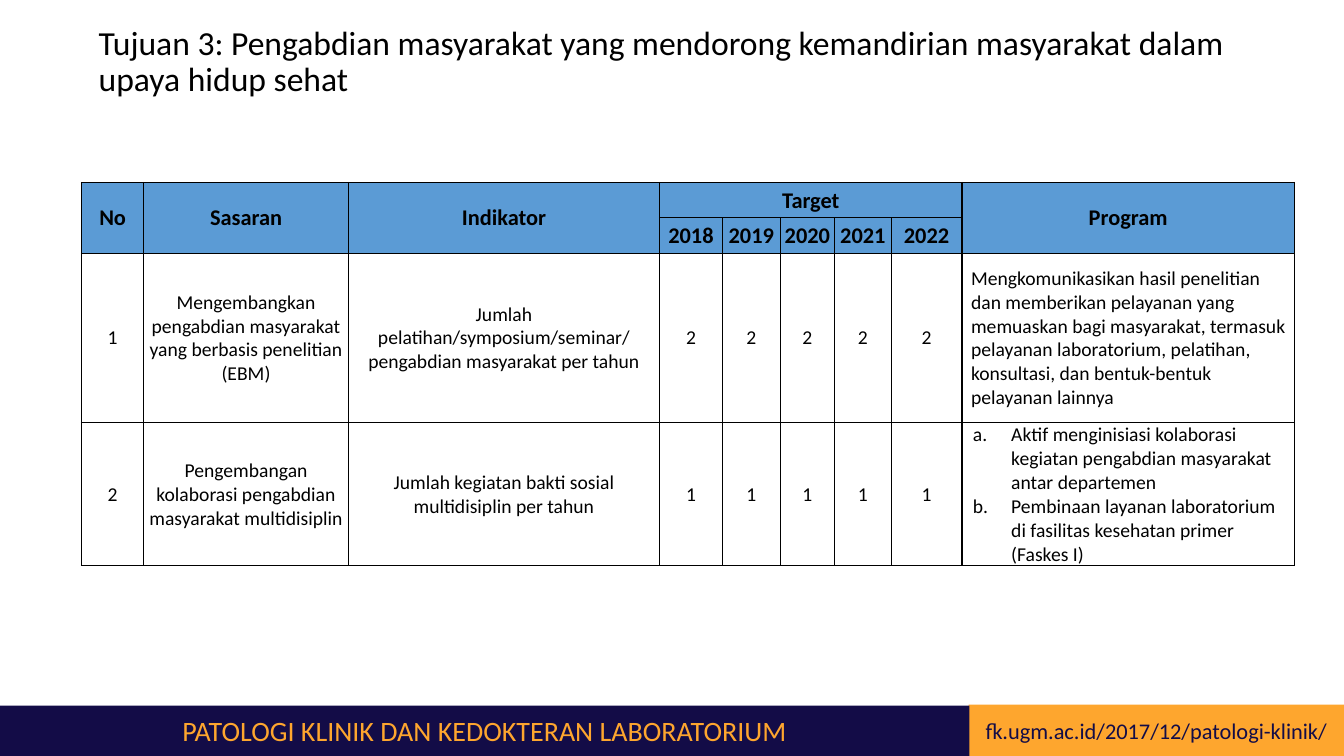
from lxml import etree
from pptx import Presentation
from pptx.dml.color import RGBColor
from pptx.enum.shapes import MSO_SHAPE
from pptx.enum.text import MSO_ANCHOR, PP_ALIGN
from pptx.oxml.ns import qn
from pptx.util import Pt

LEFT, CENTER = PP_ALIGN.LEFT, PP_ALIGN.CENTER
MIDDLE = MSO_ANCHOR.MIDDLE
RECT = MSO_SHAPE.RECTANGLE
BLACK, WHITE, BLUE = "000000", "FFFFFF", "5B9BD5"
NAVY, ORANGE = "130C47", "FEA62E"


def rgb(value):
    return RGBColor.from_string(value)


class Deck:
    font = "Calibri"

    def __init__(self, width, height):
        self.prs = Presentation()
        self.prs.slide_width, self.prs.slide_height = Pt(width), Pt(height)
        self.s = self.prs.slides.add_slide(self.prs.slide_layouts[6])

    def run(self, p, text, size, color, bold=False, align=LEFT):
        p.alignment = align
        r = p.add_run()
        r.text = text
        r.font.name, r.font.size, r.font.bold = self.font, Pt(size), bold
        r.font.color.rgb = rgb(color)

    def title(self, box, text, size):
        tf = self.s.shapes.add_textbox(*map(Pt, box)).text_frame
        tf.word_wrap = True
        tf.vertical_anchor = MIDDLE
        tf.paragraphs[0].line_spacing = 0.9
        self.run(tf.paragraphs[0], text, size, BLACK)

    def bar(self, box, text, size, fill, color):
        sp = self.s.shapes.add_shape(RECT, *map(Pt, box))
        sp.shadow.inherit = False
        sp.fill.solid()
        sp.fill.fore_color.rgb = rgb(fill)
        sp.line.fill.background()
        tf = sp.text_frame
        tf.word_wrap = True
        tf.vertical_anchor = MIDDLE
        self.run(tf.paragraphs[0], text, size, color, align=CENTER)

    def table(self, left, top, widths, heights):
        box = map(Pt, (left, top, sum(widths), sum(heights)))
        table = self.s.shapes.add_table(len(heights), len(widths), *box).table
        for col, width in zip(table.columns, widths):
            col.width = Pt(width)
        for row, height in zip(table.rows, heights):
            row.height = Pt(height)
        return table

    def style_cell(self, cell, fill):
        tcPr = cell._tc.get_or_add_tcPr()
        for side in ("a:lnL", "a:lnR", "a:lnT", "a:lnB"):
            ln = etree.SubElement(tcPr, qn(side), w=str(Pt(1)))
            solid = etree.SubElement(ln, qn("a:solidFill"))
            etree.SubElement(solid, qn("a:srgbClr"), val=BLACK)
        cell.fill.solid()
        cell.fill.fore_color.rgb = rgb(fill)
        cell.vertical_anchor = MIDDLE
        cell.margin_left = cell.margin_right = cell.margin_top = Pt(0.7)
        cell.margin_bottom = 0

    def cell_text(self, cell, text, size, bold=False, align=CENTER, indent=0):
        p = cell.text_frame.paragraphs[0]
        p._p.get_or_add_pPr().set("marL", str(Pt(indent)))
        self.run(p, text, size, BLACK, bold, align)

    def cell_list(self, cell, items, size, indent, hanging):
        tf = cell.text_frame
        for i, item in enumerate(items):
            p = tf.add_paragraph() if i else tf.paragraphs[0]
            pPr = p._p.get_or_add_pPr()
            pPr.set("marL", str(Pt(indent)))
            pPr.set("indent", str(-Pt(hanging)))
            etree.SubElement(pPr, qn("a:buFont"), typeface=self.font)
            etree.SubElement(pPr, qn("a:buAutoNum"), type="alphaLcPeriod")
            self.run(p, item, size, BLACK)


def main():
    deck = Deck(960, 540)

    # Title
    deck.title((63.4, 19.4, 828, 51),
               "Tujuan 3: Pengabdian masyarakat yang mendorong kemandirian "
               "masyarakat dalam upaya hidup sehat", 24)

    # Table grid with merged headings
    widths = [44.5, 146.2, 222.3, 44.9, 41.3, 38.8, 40.5, 50.6, 237.4]
    table = deck.table(58.2, 130.3, widths, [25.3, 25.3, 120.8, 102.4])
    for r in range(4):
        for c in range(len(widths)):
            deck.style_cell(table.cell(r, c), BLUE if r < 2 else WHITE)
    headings = {0: "No", 1: "Sasaran", 2: "Indikator", 3: "Target", 8: "Program"}
    for c, heading in headings.items():
        end = (0, 7) if heading == "Target" else (1, c)
        table.cell(0, c).merge(table.cell(*end))
        deck.cell_text(table.cell(0, c), heading, 16, bold=True)
    for i in range(5):
        deck.cell_text(table.cell(1, 3 + i), str(2018 + i), 16, bold=True)

    # Goals, indicators and yearly targets
    goals = [
        ("1", "Mengembangkan pengabdian masyarakat yang berbasis penelitian (EBM)",
         "Jumlah pelatihan/symposium/seminar/ pengabdian masyarakat per tahun",
         *["2"] * 5),
        ("2", "Pengembangan kolaborasi pengabdian masyarakat multidisiplin",
         "Jumlah kegiatan bakti sosial multidisiplin per tahun", *["1"] * 5),
    ]
    for r, goal in enumerate(goals, 2):
        for c, text in enumerate(goal):
            deck.cell_text(table.cell(r, c), text, 14)

    # Programs
    deck.cell_text(table.cell(2, 8),
                   "Mengkomunikasikan hasil penelitian dan memberikan pelayanan "
                   "yang memuaskan bagi masyarakat, termasuk pelayanan "
                   "laboratorium, pelatihan, konsultasi, dan bentuk-bentuk "
                   "pelayanan lainnya", 14, align=LEFT, indent=5.8)
    deck.cell_list(table.cell(3, 8), [
        "Aktif menginisiasi kolaborasi kegiatan pengabdian masyarakat "
        "antar departemen",
        "Pembinaan layanan laboratorium di fasilitas kesehatan primer (Faskes I)",
    ], 14, 34.5, 27.4)

    # Footer
    deck.bar((692, 503.3, 268, 36.7), "fk.ugm.ac.id/2017/12/patologi-klinik/",
             16, ORANGE, NAVY)
    deck.bar((0, 504, 692.4, 36), "PATOLOGI KLINIK DAN KEDOKTERAN LABORATORIUM",
             20, NAVY, ORANGE)

    deck.prs.save("out.pptx")


if __name__ == "__main__":
    main()
